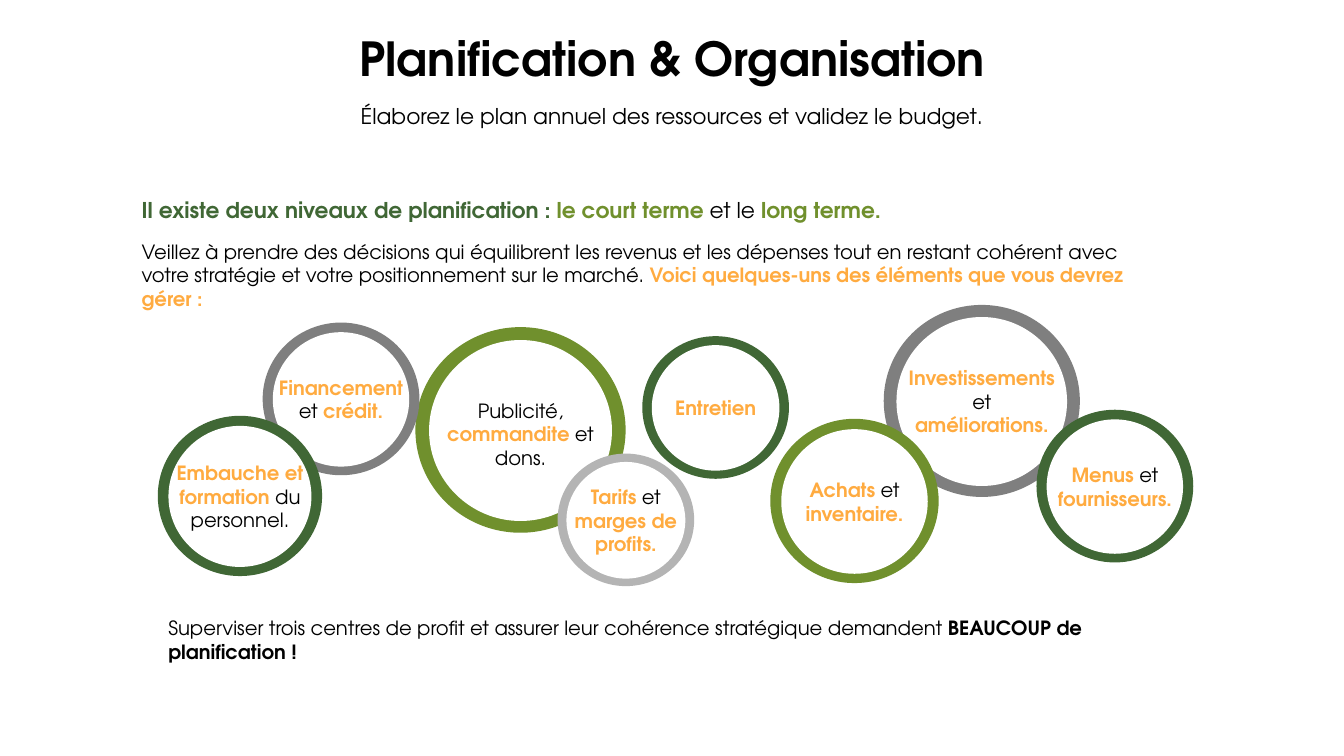
from lxml.etree import SubElement
from pptx import Presentation
from pptx.dml.color import RGBColor
from pptx.enum.shapes import MSO_SHAPE
from pptx.enum.text import MSO_ANCHOR, MSO_AUTO_SIZE, PP_ALIGN
from pptx.oxml.ns import qn
from pptx.util import Pt

PX = 9144
CURVE = 0.55
FONT = "TeX Gyre Adventor"
BLACK = RGBColor(0x00, 0x00, 0x00)
WHITE = RGBColor(0xFF, 0xFF, 0xFF)
DARK_GREEN = RGBColor(0x40, 0x67, 0x35)
GREEN = RGBColor(0x70, 0x90, 0x2D)
ORANGE = RGBColor(0xFF, 0xAB, 0x40)
GREY = RGBColor(0x7F, 0x7F, 0x7F)
LIGHT_GREY = RGBColor(0xB4, 0xB4, 0xB4)

TITLE = "Planification & Organisation"
SUBTITLE = "Élaborez le plan annuel des ressources et validez le budget."
LEVELS = [
    ("Il existe deux niveaux de planification : ", DARK_GREEN, True),
    ("le court terme ", GREEN, True),
    ("et le ", BLACK, False),
    ("long terme.", GREEN, True),
]
DECISIONS = [
    ("Veillez à prendre des décisions qui équilibrent les revenus et les dépenses "
     "tout en restant cohérent avec votre stratégie et votre positionnement sur le marché. ",
     BLACK, False),
    ("Voici quelques-uns des éléments que vous devrez gérer :", ORANGE, True),
]
CONCLUSION = [
    ("Superviser trois centres de profit et assurer leur cohérence stratégique demandent ",
     BLACK, False),
    ("BEAUCOUP de planification !", BLACK, True),
]


def key(text):
    return (text, ORANGE, True)


def plain(text):
    return (text, BLACK, False)


RINGS = [
    ((824, 649, 417, 408), GREEN, 19,
     [[plain("Publicité,")], [key("commandite"), plain(" et")], [plain("dons.")]]),
    ((521, 640, 311, 303), GREY, 5,
     [[key("Financement "), plain("et "), key("crédit.")]]),
    ((313, 825, 326, 318), DARK_GREEN, 5,
     [[key("Embauche et formation "), plain("du personnel.")]]),
    ((1274, 667, 291, 283), DARK_GREEN, 5, [[key("Entretien")]]),
    ((1753, 605, 389, 381), GREY, 5,
     [[key("Investissements "), plain("et")], [key("améliorations.")]]),
    ((1528, 831, 334, 326), GREEN, 5,
     [[key("Achats "), plain("et "), key("inventaire.")]]),
    ((2056, 813, 311, 303), DARK_GREEN, 5,
     [[key("Menus"), plain(" et "), key("fournisseurs.")]]),
    ((1106, 900, 271, 263), LIGHT_GREY, 5,
     [[key("Tarifs "), plain("et"), key(" marges de profits.")]]),
]


def set_frame(frame, side, top, bottom, anchor=MSO_ANCHOR.TOP):
    frame.word_wrap = True
    frame.auto_size = MSO_AUTO_SIZE.NONE
    frame.vertical_anchor = anchor
    frame.margin_left = frame.margin_right = side * PX
    frame.margin_top, frame.margin_bottom = top * PX, bottom * PX


def write(paragraph, runs, size, align=PP_ALIGN.LEFT, before=0, after=0):
    paragraph.alignment = align
    paragraph.space_before, paragraph.space_after = Pt(before), Pt(after)
    for text, color, bold in runs:
        run = paragraph.add_run()
        run.text = text
        run.font.name = FONT
        run.font.size = Pt(size)
        run.font.bold = bold
        run.font.color.rgb = color


def place(shape, box):
    shape.left, shape.top, shape.width, shape.height = (value * PX for value in box)


def paint(shape, color):
    shape.fill.solid()
    shape.fill.fore_color.rgb = color
    shape.line.fill.background()
    shape.shadow.inherit = False


def add_text(slide, box):
    shape = slide.shapes.add_textbox(*(value * PX for value in box))
    set_frame(shape.text_frame, 10, 10, 10)
    return shape.text_frame


def round_corners(disc):
    lines = list(disc.element.iter(qn("a:lnTo")))
    center_x, center_y = disc.width // 2, disc.height // 2
    corners = [(disc.width, 0), (disc.width, disc.height), (0, disc.height), (0, 0)]
    ends = [(center_x, 0), (disc.width, center_y), (center_x, disc.height),
            (0, center_y), (center_x, 0)]
    for line, corner, start, end in zip(lines, corners, ends, ends[1:]):
        line.tag = qn("a:cubicBezTo")
        line.clear()
        controls = [tuple(round(a + CURVE * (b - a)) for a, b in zip(point, corner))
                    for point in (start, end)]
        for x, y in (*controls, end):
            SubElement(line, qn("a:pt"), x=str(x), y=str(y))


def add_disc(slide, box):
    left, top, width, height = (round(value * PX) for value in box)
    middle_x, middle_y = left + width // 2, top + height // 2
    builder = slide.shapes.build_freeform(middle_x, top)
    builder.add_line_segments([(left + width, middle_y), (middle_x, top + height),
                               (left, middle_y), (middle_x, top)], close=False)
    disc = builder.convert_to_shape()
    round_corners(disc)
    return disc


def add_ring(slide, box, color, top_margin, paragraphs):
    ring = slide.shapes.add_shape(MSO_SHAPE.OVAL, *(value * PX for value in box))
    paint(ring, color)
    left, top, width, height = box
    disc = add_disc(slide, (left + 0.065 * width, top + 0.063 * height,
                            0.87 * width, 0.88 * height))
    paint(disc, WHITE)
    frame = disc.text_frame
    set_frame(frame, 10, top_margin, 5, MSO_ANCHOR.MIDDLE)
    for index, runs in enumerate(paragraphs):
        paragraph = frame.add_paragraph() if index else frame.paragraphs[0]
        write(paragraph, runs, 28, PP_ALIGN.CENTER)


def main():
    presentation = Presentation()
    presentation.slide_width, presentation.slide_height = 2666 * PX, 1500 * PX
    slide = presentation.slides.add_slide(presentation.slide_layouts[0])

    title, subtitle = slide.placeholders
    place(title, (657, 53, 1352, 123))
    set_frame(title.text_frame, 10, 5, 5)
    write(title.text_frame.paragraphs[0], [(TITLE, BLACK, True)], 67, PP_ALIGN.CENTER)

    place(subtitle, (429, 182, 1807, 92))
    set_frame(subtitle.text_frame, 24, 12, 12)
    paragraph = subtitle.text_frame.paragraphs[0]
    write(paragraph, [(SUBTITLE, BLACK, False)], 31, PP_ALIGN.CENTER)
    paragraph.line_spacing = 1.2

    introduction = add_text(slide, (271, 380, 2059, 204))
    write(introduction.paragraphs[0], LEVELS, 31)
    write(introduction.add_paragraph(), DECISIONS, 28, before=24, after=10)

    conclusion = add_text(slide, (324, 1212, 2035, 144))
    write(conclusion.paragraphs[0], CONCLUSION, 28, after=10)

    for ring in RINGS:
        add_ring(slide, *ring)

    presentation.save("out.pptx")


if __name__ == "__main__":
    main()
